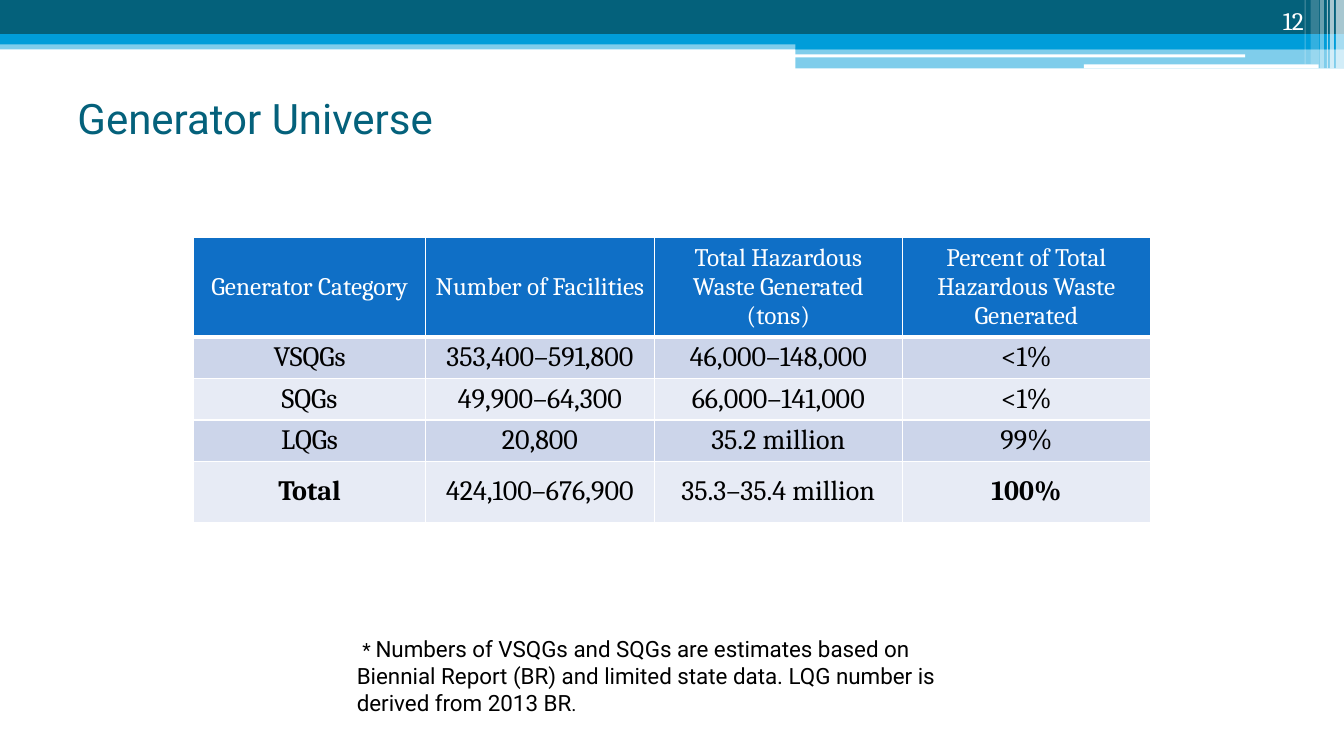
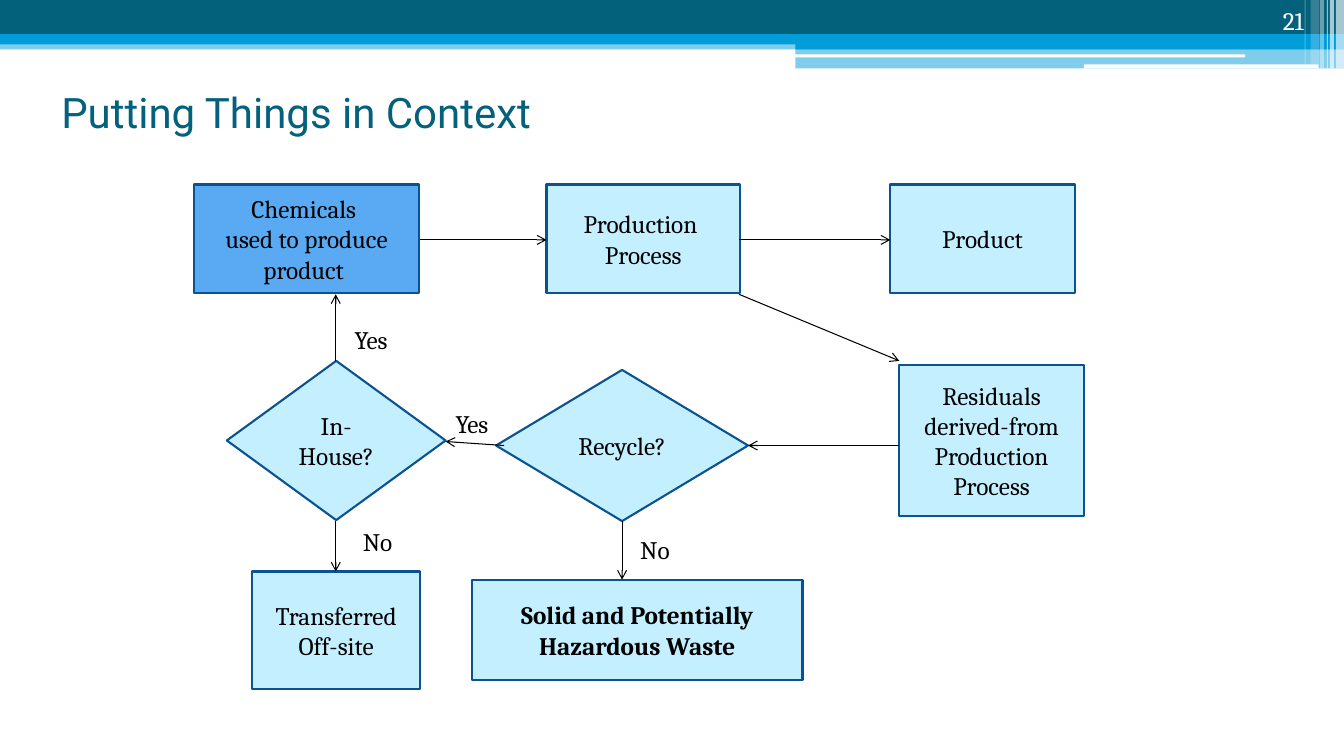
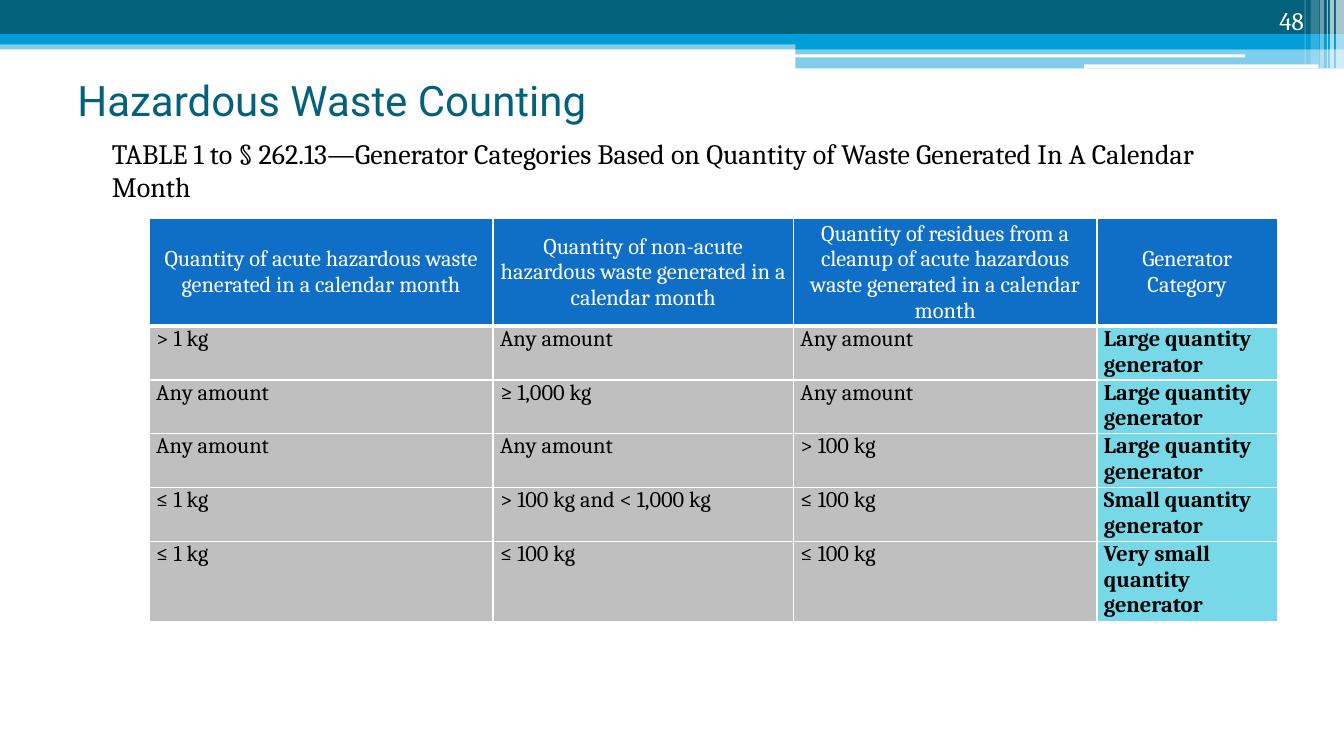
from lxml.etree import SubElement
from pptx import Presentation
from pptx.dml.color import RGBColor
from pptx.enum.shapes import MSO_CONNECTOR, MSO_SHAPE
from pptx.enum.text import MSO_ANCHOR, PP_ALIGN
from pptx.oxml.ns import qn
from pptx.util import Inches, Pt

HEADING, BODY = "Roboto", "Cambria"
TEAL, CYAN, WHITE, BLACK = "04617B", "009DD9", "FFFFFF", "000000"
HEAD_BLUE, STRIPE_DARK, STRIPE_LIGHT = "0F6FC6", "CCD5EA", "E7EBF5"
GREY, AQUA = "BFBFBF", "77D9E8"
BOX_FILL, START_FILL, BOX_LINE = "C4EFFF", "59AAF2", "0B5292"

# left, top, width, height, colour, opacity in percent
BANDS = [
    (0, 0.4, 13.33, 0.09, CYAN, 50),
    (0, 0, 13.33, 0.34, TEAL, 100),
    (0, 0.34, 13.33, 0.1, CYAN, 100),
    (7.89, 0.39, 5.44, 0.1, CYAN, 100),
    (7.89, 0.48, 5.44, 0.2, CYAN, 50),
    (7.88, 0.54, 4.47, 0.03, WHITE, 100),
    (10.75, 0.64, 2.33, 0.04, WHITE, 100),
    (13.25, 0, 0.08, 0.68, WHITE, 65),
    (13.19, 0, 0.04, 0.68, WHITE, 65),
    (13.16, 0, 0.01, 0.68, WHITE, 60),
    (13.09, 0, 0.04, 0.68, WHITE, 40),
    (13, 0, 0.08, 0.64, WHITE, 20),
    (12.94, 0, 0.01, 0.64, WHITE, 30),
]

GENERATORS = [
    ("Generator Category", "Number of Facilities",
     "Total Hazardous Waste Generated (tons)",
     "Percent of Total Hazardous Waste Generated"),
    ("VSQGs", "353,400–591,800", "46,000–148,000", "<1%"),
    ("SQGs", "49,900–64,300", "66,000–141,000", "<1%"),
    ("LQGs", "20,800", "35.2 million", "99%"),
    ("Total", "424,100–676,900", "35.3–35.4 million", "100%"),
]

CATEGORIES = [
    ("Quantity of acute hazardous waste generated in a calendar month",
     "Quantity of non-acute hazardous waste generated in a calendar month",
     "Quantity of residues from a cleanup of acute hazardous waste generated "
     "in a calendar month",
     "Generator Category"),
    ("> 1 kg", "Any amount", "Any amount", "Large quantity generator"),
    ("Any amount", "≥ 1,000 kg", "Any amount", "Large quantity generator"),
    ("Any amount", "Any amount", "> 100 kg", "Large quantity generator"),
    ("≤ 1 kg", "> 100 kg and < 1,000 kg", "≤ 100 kg",
     "Small quantity generator"),
    ("≤ 1 kg", "≤ 100 kg", "≤ 100 kg", "Very small quantity generator"),
]

RECT, DIAMOND = MSO_SHAPE.RECTANGLE, MSO_SHAPE.DIAMOND
STEPS = [
    (RECT, (1.92, 1.83, 2.24, 1.08), ["Chemicals ", "used to produce product "],
     {"fill": START_FILL}),
    (RECT, (5.42, 1.83, 1.92, 1.08), ["Production ", "Process"], {}),
    (RECT, (8.83, 1.83, 1.83, 1.08), ["Product"], {}),
    (RECT, (8.92, 3.62, 1.83, 1.5),
     ["Residuals", "derived-from", "Production Process"], {}),
    (DIAMOND, (4.92, 3.67, 2.5, 1.5), ["Recycle?"], {}),
    (RECT, (4.68, 5.75, 3.28, 1), ["Solid and Potentially Hazardous Waste"],
     {"bold": True}),
    (MSO_SHAPE.FLOWCHART_DECISION, (2.25, 3.58, 2.17, 1.58), ["In-House?"], {}),
    (RECT, (2.5, 5.67, 1.67, 1.17), ["Transferred", "Off-site"], {}),
]
ARROWS = [
    (4.17, 2.38, 5.42, 2.38),
    (7.33, 2.38, 8.83, 2.38),
    (7.33, 2.92, 8.92, 3.58),
    (8.92, 4.42, 7.42, 4.42),
    (6.17, 5.17, 6.17, 5.75),
    (5, 4.42, 4.42, 4.38),
    (3.33, 3.58, 3.33, 2.92),
    (3.33, 5.17, 3.33, 5.67),
]
ANSWERS = [("No", 6.25, 5.25), ("Yes", 4.42, 4), ("Yes", 3.42, 3.17),
           ("No", 3.5, 5.17)]


def rgb(value):
    return RGBColor.from_string(value)


def inches(values):
    return [Inches(value) for value in values]


def add_span(para, text, size, font=BODY, color=BLACK, bold=False):
    span = para.add_run()
    span.text = text
    for name, value in {"size": Pt(size), "name": font, "bold": bold}.items():
        setattr(span.font, name, value)
    span.font.color.rgb = rgb(color)


def write(frame, lines, size, align=PP_ALIGN.LEFT, anchor=MSO_ANCHOR.TOP,
          **look):
    frame.word_wrap = True
    frame.vertical_anchor = anchor
    for index, line in enumerate(lines):
        para = frame.add_paragraph() if index else frame.paragraphs[0]
        para.alignment = align
        add_span(para, line, size, **look)


def add_text(slide, box, text, size, **look):
    frame = slide.shapes.add_textbox(*inches(box)).text_frame
    write(frame, [text], size, **look)
    return frame


def add_filled(slide, kind, box, color, opacity=100):
    shape = slide.shapes.add_shape(kind, *inches(box))
    shape.shadow.inherit = False
    shape.fill.solid()
    shape.fill.fore_color.rgb = rgb(color)
    shape.line.fill.background()
    if opacity < 100:
        tint = shape.fill._xPr.find(".//" + qn("a:srgbClr"))
        SubElement(tint, qn("a:alpha"), val=str(opacity * 1000))
    return shape


def add_base(deck, title, title_box, number):
    """Add a slide with the top bands, the title and the page number."""
    slide = deck.slides.add_slide(deck.slide_layouts[6])
    for *box, color, opacity in BANDS:
        add_filled(slide, RECT, box, color, opacity)
    add_text(slide, title_box, title, 30, font=HEADING, color=TEAL,
             anchor=MSO_ANCHOR.MIDDLE)
    add_text(slide, (11.92, 0, 1.11, 0.4), str(number), 18, color=WHITE,
             align=PP_ALIGN.RIGHT, anchor=MSO_ANCHOR.BOTTOM)
    return slide


def set_borders(cell, bottom):
    properties = cell._tc.get_or_add_tcPr()
    for side, width in {"L": 1, "R": 1, "T": 1, "B": bottom}.items():
        line = SubElement(properties, qn("a:ln" + side), w=str(Pt(width)))
        fill = SubElement(line, qn("a:solidFill"))
        SubElement(fill, qn("a:srgbClr"), val=WHITE)


def add_grid(slide, corner, widths, heights, rows, head_size, body_size,
             pad, body_layout, body_look):
    """Add a table; body_look(row, column) gives the fill and bold of a cell."""
    box = (*corner, sum(widths), sum(heights))
    table = slide.shapes.add_table(len(rows), len(widths), *inches(box)).table
    for column, width in zip(table.columns, widths):
        column.width = Inches(width)
    for row, height in zip(table.rows, heights):
        row.height = Inches(height)
    margins = {"margin_left": 0.07, "margin_right": 0.07,
               "margin_top": pad, "margin_bottom": pad}
    centred = {"align": PP_ALIGN.CENTER, "anchor": MSO_ANCHOR.MIDDLE}
    for r, texts in enumerate(rows):
        for c, text in enumerate(texts):
            cell = table.cell(r, c)
            for name, value in margins.items():
                setattr(cell, name, Inches(value))
            set_borders(cell, 1 if r else 3)
            fill, bold = body_look(r, c) if r else (HEAD_BLUE, False)
            cell.fill.solid()
            cell.fill.fore_color.rgb = rgb(fill)
            layout = body_layout if r else centred
            cell.vertical_anchor = layout["anchor"]
            para = cell.text_frame.paragraphs[0]
            para.alignment = layout["align"]
            add_span(para, text, body_size if r else head_size,
                     color=BLACK if r else WHITE, bold=bold)


def add_step(slide, kind, box, lines, fill=BOX_FILL, bold=False):
    shape = add_filled(slide, kind, box, fill)
    shape.line.color.rgb = rgb(BOX_LINE)
    shape.line.width = Pt(1.5)
    write(shape.text_frame, lines, 18, align=PP_ALIGN.CENTER,
          anchor=MSO_ANCHOR.MIDDLE, bold=bold)


def add_arrow(slide, ends):
    arrow = slide.shapes.add_connector(MSO_CONNECTOR.STRAIGHT, *inches(ends))
    arrow.line.color.rgb = rgb(BLACK)
    arrow.line.width = Pt(0.75)
    SubElement(arrow.line._get_or_add_ln(), qn("a:tailEnd"), type="arrow")
    SubElement(arrow._element.spPr, qn("a:effectLst"))


def universe_slide(deck):
    slide = add_base(deck, "Generator Universe", (0.67, 0.58, 12, 1.17), 12)

    def look(row, column):
        fill = STRIPE_DARK if row % 2 else STRIPE_LIGHT
        return fill, row == 4 and column in (0, 3)

    add_grid(slide, (1.92, 2.36), (2.3, 2.27, 2.46, 2.46),
             (0.94, 0.39, 0.39, 0.39, 0.6), GENERATORS, 18, 20, 0.04,
             {"align": PP_ALIGN.CENTER, "anchor": MSO_ANCHOR.MIDDLE}, look)
    note = add_text(slide, (3.44, 6.25, 6.45, 0.91), " ", 14, font="Arial")
    for text, size in [
            ("* ", 14),
            ("Numbers of VSQGs and SQGs are estimates based on Biennial Report "
             "(BR) and limited state data. LQG number is derived from 2013 BR",
             16),
            (".", 14)]:
        add_span(note.paragraphs[0], text, size, font=HEADING)


def context_slide(deck):
    slide = add_base(deck, "Putting Things in Context",
                     (0.51, 0.38, 10.33, 1.46), 21)
    for kind, box, lines, look in STEPS:
        add_step(slide, kind, box, lines, **look)
    for ends in ARROWS:
        add_arrow(slide, ends)
    for text, left, top in ANSWERS:
        add_text(slide, (left, top, 0.7, 0.4), text, 18)


def counting_slide(deck):
    slide = add_base(deck, "Hazardous Waste Counting",
                     (0.67, 0.4, 12, 1.17), 48)
    caption = add_text(
        slide, (0.92, 1.3, 11.5, 0.85),
        "TABLE 1 to § 262.13—Generator Categories Based on Quantity of Waste "
        "Generated In A Calendar Month", 20)
    caption.margin_left = Inches(0.19)
    caption.paragraphs[0].space_before = Pt(2.2)

    def look(row, column):
        return (AQUA, True) if column == 3 else (GREY, False)

    add_grid(slide, (1.48, 2.17), (3.41, 2.98, 3.01, 1.79),
             (1.02, 0.51, 0.51, 0.51, 0.51, 0.76), CATEGORIES, 16, 16, 0,
             {"align": PP_ALIGN.LEFT, "anchor": MSO_ANCHOR.TOP}, look)


def main():
    deck = Presentation()
    deck.slide_width, deck.slide_height = Inches(13.33), Inches(7.5)
    for build in (universe_slide, context_slide, counting_slide):
        build(deck)
    deck.save("out.pptx")


if __name__ == "__main__":
    main()
